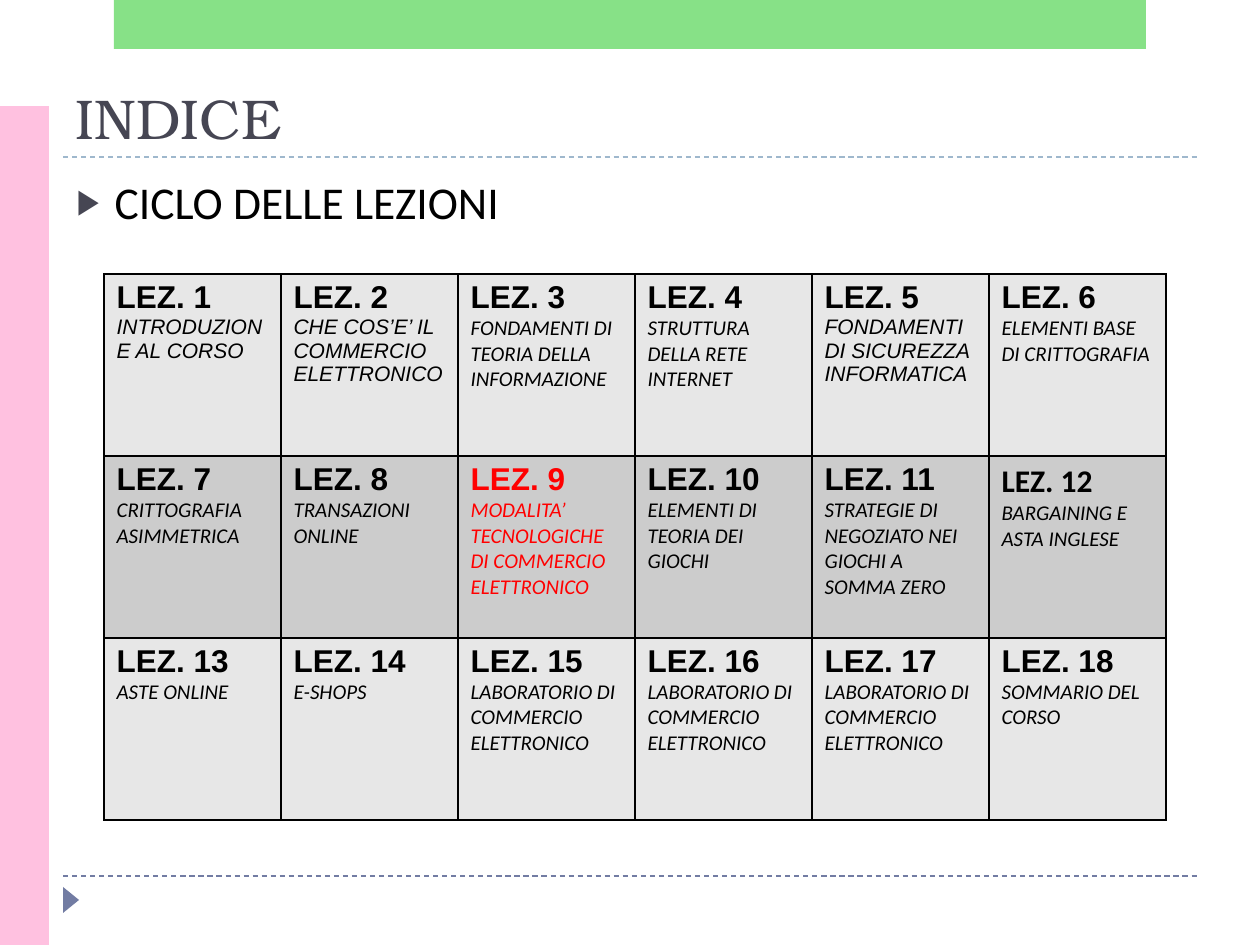
from lxml import etree
from pptx import Presentation
from pptx import util as u
from pptx.dml.color import RGBColor
from pptx.enum import dml, shapes, text
from pptx.oxml import ns

PX_PER_INCH = 126
BLACK = RGBColor(0x00, 0x00, 0x00)
RED = RGBColor(0xFF, 0x00, 0x00)
SLATE = RGBColor(0x46, 0x46, 0x53)
BLUE = RGBColor(0x72, 0x7C, 0xA3)
PALE_BLUE = RGBColor(0x9F, 0xB8, 0xCD)
PINK = RGBColor(0xFF, 0xC1, 0xE0)
GREEN = RGBColor(0x62, 0xD8, 0x62)
LIGHT_GREY = RGBColor(0xE7, 0xE7, 0xE7)
MID_GREY = RGBColor(0xCC, 0xCC, 0xCC)

COLUMNS = 6
CURRENT_LESSON = 9
ARIAL_TOPICS = (1, 2, 5)
CALIBRI_HEADINGS = (12,)
TOPICS = [
    "INTRODUZIONE AL CORSO",
    "CHE COS’E’ IL COMMERCIO ELETTRONICO",
    "FONDAMENTI DI TEORIA DELLA\nINFORMAZIONE",
    "STRUTTURA DELLA RETE INTERNET",
    "FONDAMENTI DI SICUREZZA INFORMATICA",
    "ELEMENTI BASE DI CRITTOGRAFIA",
    "CRITTOGRAFIA ASIMMETRICA",
    "TRANSAZIONI ONLINE",
    "MODALITA’ TECNOLOGICHE DI COMMERCIO ELETTRONICO",
    "ELEMENTI DI TEORIA DEI GIOCHI",
    "STRATEGIE DI NEGOZIATO NEI GIOCHI A SOMMA ZERO",
    "BARGAINING E ASTA INGLESE",
    "ASTE ONLINE",
    "E-SHOPS",
    "LABORATORIO DI COMMERCIO ELETTRONICO",
    "LABORATORIO DI COMMERCIO ELETTRONICO",
    "LABORATORIO DI COMMERCIO ELETTRONICO",
    "SOMMARIO DEL CORSO",
]


def px(length):
    return u.Emu(round(length * u.Inches(1) / PX_PER_INCH))


def add_child(parent, tag, **attributes):
    return etree.SubElement(parent, ns.qn(tag), attributes)


def add_run(paragraph, words, font, size, color, bold=False, italic=False):
    run = paragraph.add_run()
    run.text = words
    run.font.name = font
    run.font.size = u.Pt(size)
    run.font.color.rgb = color
    run.font.bold = bold
    run.font.italic = italic


def add_block(slide, kind, box, color, opacity=100, rotation=0):
    block = slide.shapes.add_shape(kind, *map(px, box))
    block.shadow.inherit = False
    block.fill.solid()
    block.fill.fore_color.rgb = color
    block.line.fill.background()
    block.rotation = rotation
    if opacity < 100:
        fill_color = block.fill._xPr.find(".//" + ns.qn("a:srgbClr"))
        add_child(fill_color, "a:alpha", val=str(opacity * 1000))


def add_dashed_rule(slide, y, color):
    rule = slide.shapes.add_connector(
        shapes.MSO_CONNECTOR.STRAIGHT, px(63), px(y), px(1197), px(y))
    rule.line.color.rgb = color
    rule.line.width = u.Pt(0.75)
    rule.line.dash_style = dml.MSO_LINE.DASH
    add_child(rule._element.spPr, "a:effectLst")


def place(placeholder, box, anchor):
    """Move a placeholder and return its first paragraph, left-aligned."""
    placeholder.left, placeholder.top, placeholder.width, placeholder.height = map(px, box)
    frame = placeholder.text_frame
    frame.word_wrap = True
    frame.auto_size = text.MSO_AUTO_SIZE.NONE
    frame.vertical_anchor = anchor
    paragraph = frame.paragraphs[0]
    paragraph.alignment = text.PP_ALIGN.LEFT
    paragraph.space_before = u.Pt(0)
    return paragraph


def add_bullet(paragraph, indent):
    properties = paragraph._p.get_or_add_pPr()
    properties.set("marL", str(px(indent)))
    properties.set("indent", str(-px(indent)))
    bullet_color = add_child(properties, "a:buClr")
    add_child(bullet_color, "a:srgbClr", val=str(SLATE))
    add_child(properties, "a:buSzPct", val="76000")
    add_child(properties, "a:buChar", char="▶")


def outline_cell(cell):
    properties = cell._tc.get_or_add_tcPr()
    for position, side in enumerate(("a:lnL", "a:lnR", "a:lnT", "a:lnB")):
        border = etree.Element(ns.qn(side), w=str(u.Pt(1)))
        fill = add_child(border, "a:solidFill")
        add_child(fill, "a:srgbClr", val=str(BLACK))
        properties.insert(position, border)


def fill_lesson(cell, number, topic):
    color = RED if number == CURRENT_LESSON else BLACK
    heading_font = "Calibri" if number in CALIBRI_HEADINGS else "Arial"
    topic_font = "Arial" if number in ARIAL_TOPICS else "Calibri"
    heading = cell.text_frame.paragraphs[0]
    add_run(heading, f"LEZ. {number}", heading_font, 18, color, bold=True)
    subject = cell.text_frame.add_paragraph()
    for index, line in enumerate(topic.split("\n")):
        if index:
            subject.add_line_break()
        add_run(subject, line, topic_font, 12, color, italic=True)


def add_lessons(slide):
    rows = len(TOPICS) // COLUMNS
    frame = slide.shapes.add_table(
        rows, COLUMNS, px(104), px(274), px(177 * COLUMNS), px(182 * rows))
    table = frame.table
    table.first_row = table.horz_banding = False
    for column in table.columns:
        column.width = px(177)
    for row in table.rows:
        row.height = px(182)
    for index, topic in enumerate(TOPICS):
        row, column = divmod(index, COLUMNS)
        cell = table.cell(row, column)
        cell.fill.solid()
        cell.fill.fore_color.rgb = MID_GREY if row % 2 else LIGHT_GREY
        outline_cell(cell)
        fill_lesson(cell, index + 1, topic)


def main():
    deck = Presentation()
    deck.slide_width, deck.slide_height = px(1260), px(945)
    slide = deck.slides.add_slide(deck.slide_layouts[1])

    add_dashed_rule(slide, 876, BLUE)
    add_dashed_rule(slide, 157, PALE_BLUE)
    add_block(slide, shapes.MSO_SHAPE.ISOSCELES_TRIANGLE, (58, 892, 26, 16), BLUE, rotation=90)
    add_block(slide, shapes.MSO_SHAPE.RECTANGLE, (0, 106, 49, 839), PINK)
    add_block(slide, shapes.MSO_SHAPE.RECTANGLE, (114, 0, 1032, 49), GREEN, opacity=76)

    title = place(slide.shapes.title, (63, 69, 1134, 88), text.MSO_ANCHOR.BOTTOM)
    add_run(title, "INDICE", "TeX Gyre Bonum", 32, SLATE)
    subtitle = place(slide.placeholders[1], (64, 168, 1134, 97), text.MSO_ANCHOR.TOP)
    add_bullet(subtitle, 38)
    add_run(subtitle, "CICLO DELLE LEZIONI", "Calibri", 26, BLACK)

    add_lessons(slide)
    deck.save("out.pptx")


if __name__ == "__main__":
    main()
